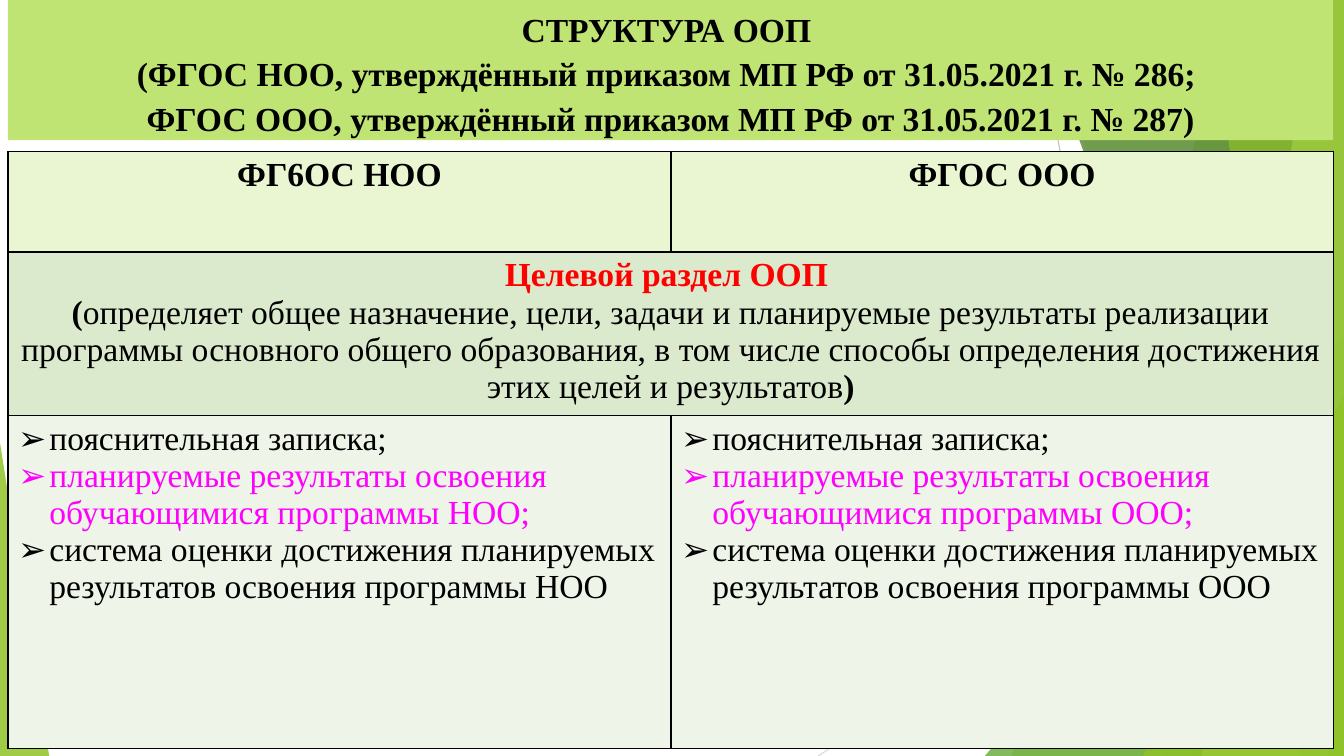
from dataclasses import dataclass

from lxml import etree
from pptx import Presentation
from pptx.dml.color import RGBColor
from pptx.enum.shapes import MSO_CONNECTOR, MSO_SHAPE
from pptx.enum.text import MSO_ANCHOR, PP_ALIGN
from pptx.oxml.ns import qn
from pptx.util import Cm, Pt

RECT, TRIANGLE = MSO_SHAPE.RECTANGLE, MSO_SHAPE.ISOSCELES_TRIANGLE
STRAIGHT = MSO_CONNECTOR.STRAIGHT
TOP, LEFT, CENTER = MSO_ANCHOR.TOP, PP_ALIGN.LEFT, PP_ALIGN.CENTER


@dataclass(frozen=True)
class Theme:
    font: str = "Times New Roman"
    size: float = 24
    black: str = "000000"
    red: str = "FF0000"
    magenta: str = "FF00FF"
    lime: str = "C0E474"
    green: str = "90C226"
    leaf: str = "54A021"
    forest: str = "3F7819"
    head_fill: str = "EAF6D1"
    section_fill: str = "DBE9CD"
    body_fill: str = "EEF4E8"


T = Theme()

# Content
TITLE = [
    "СТРУКТУРА ООП ",
    "(ФГОС НОО, утверждённый приказом МП РФ от 31.05.2021 г. № 286; ",
    "ФГОС ООО, утверждённый приказом МП РФ от 31.05.2021 г. № 287)",
]
HEADS = ["ФГ6ОС НОО", "ФГОС ООО"]
LEVELS = ["НОО", "ООО"]
# Paragraphs of runs: (text, colour, bold)
SECTION = [
    [("Целевой раздел ООП ", T.red, True)],
    [("(", T.black, True),
     ("определяет общее назначение, цели, задачи и планируемые результаты "
      "реализации программы основного общего образования, в том числе способы "
      "определения достижения этих целей и результатов", T.black, False),
     (")", T.black, True)],
]
ITEMS = [
    ("пояснительная записка;", T.black),
    ("планируемые результаты освоения обучающимися программы {};", T.magenta),
    ("система оценки достижения планируемых результатов освоения программы {}",
     T.black),
]

# Geometry in centimetres
WIDTH, HEIGHT = 33.87, 19.05
TITLE_BOX = (0.2, 0, 33.4, 3.53)
TABLE_LEFT, TABLE_TOP = 0.2, 3.81
COLS, ROWS = [16.71, 16.69], [2.54, 4.11, 8.41]
INDENT = 0.79

THIN_LINES = [
    ((26.04, 0), (29.41, HEIGHT), "BFBFBF"),
    ((WIDTH, 10.24), (20.62, HEIGHT), "D9D9D9"),
]
# Panels reach the right edge: (top x, bottom x), colour, opacity %
# Triangles: (left, top, width, apex), colour, opacity %; all stand on the bottom
DECOR = [
    ((31.19, 25.5), T.green, 30),
    ((26.67, 30.05), T.green, 20),
    ((24.82, 8.46, 9.05, 1), T.leaf, 72),
    ((25.93, 32.79), T.forest, 70),
    ((33.1, 30.28), T.lime, 70),
    ((30.38, 33.48), T.green, 65),
    ((28.8, 9.98, 5.07, 1), T.green, 80),
    ((0, 11.15, 1.24, 0), T.green, 85),
]


def paint(sp, color, opacity=100):
    sp.shadow.inherit = False
    sp.line.fill.background()
    sp.fill.solid()
    sp.fill.fore_color.rgb = RGBColor.from_string(color)
    if opacity < 100:
        clr = sp._element.spPr.find(qn("a:solidFill"))[0]
        etree.SubElement(clr, qn("a:alpha"), val=str(opacity * 1000))


def add_run(p, text, color, bold):
    r = p.add_run()
    r.text = text
    r.font.name, r.font.size, r.font.bold = T.font, Pt(T.size), bold
    r.font.color.rgb = RGBColor.from_string(color)


def add_bullet(p):
    pPr = p._p.get_or_add_pPr()
    pPr.set("marL", str(Cm(INDENT)))
    pPr.set("indent", str(-Cm(INDENT)))
    etree.SubElement(pPr, qn("a:buFont"), typeface="Wingdings")
    etree.SubElement(pPr, qn("a:buChar"), char="➢")
    pPr.find(qn("a:buFont")).set("typeface", "Arial")


def add_borders(cell):
    tcPr = cell._tc.get_or_add_tcPr()
    for i, side in enumerate(("lnL", "lnR", "lnT", "lnB")):
        ln = etree.Element(qn("a:" + side), w=str(Pt(1)))
        fill = etree.SubElement(ln, qn("a:solidFill"))
        etree.SubElement(fill, qn("a:srgbClr"), val=T.black)
        tcPr.insert(i, ln)


def fill_cell(cell, paragraphs, color, align=CENTER, bullets=False):
    cell.fill.solid()
    cell.fill.fore_color.rgb = RGBColor.from_string(color)
    tf = cell.text_frame
    for i, runs in enumerate(paragraphs):
        p = tf.add_paragraph() if i else tf.paragraphs[0]
        p.alignment = align
        if bullets:
            add_bullet(p)
        for run in runs:
            add_run(p, *run)


def add_decor(shapes):
    for start, end, color in THIN_LINES:
        line = shapes.add_connector(STRAIGHT, *map(Cm, start + end))
        line.line.color.rgb = RGBColor.from_string(color)
        line.line.width = Pt(0.75)
        etree.SubElement(line._element.spPr, qn("a:effectLst"))
    for outline, color, opacity in DECOR:
        if len(outline) == 2:
            top_x, bottom_x = map(Cm, outline)
            right, bottom = Cm(WIDTH), Cm(HEIGHT)
            builder = shapes.build_freeform(top_x, 0)
            builder.add_line_segments(
                [(right, 0), (right, bottom), (bottom_x, bottom)])
            sp = builder.convert_to_shape()
        else:
            left, top, width, apex = outline
            sp = shapes.add_shape(TRIANGLE, Cm(left), Cm(top), Cm(width),
                                  Cm(HEIGHT - top))
            sp.adjustments[0] = apex
        paint(sp, color, opacity)


def add_title(shapes):
    sp = shapes.add_shape(RECT, *map(Cm, TITLE_BOX))
    paint(sp, T.lime)
    tf = sp.text_frame
    tf.word_wrap, tf.vertical_anchor = True, TOP
    p = tf.paragraphs[0]
    p.alignment, p.line_spacing = CENTER, 1.1
    for i, text in enumerate(TITLE):
        if i:
            p.add_line_break()
        add_run(p, text, T.black, True)


def add_structure_table(shapes):
    table = shapes.add_table(len(ROWS), len(COLS), Cm(TABLE_LEFT), Cm(TABLE_TOP),
                             Cm(sum(COLS)), Cm(sum(ROWS))).table
    table.first_row = table.horz_banding = False
    for col, width in zip(table.columns, COLS):
        col.width = Cm(width)
    for row, height in zip(table.rows, ROWS):
        row.height = Cm(height)
    table.cell(1, 0).merge(table.cell(1, 1))
    fill_cell(table.cell(1, 0), SECTION, T.section_fill)
    for c, (head, level) in enumerate(zip(HEADS, LEVELS)):
        fill_cell(table.cell(0, c), [[(head, T.black, True)]], T.head_fill)
        items = [[(text.format(level), color, False)] for text, color in ITEMS]
        fill_cell(table.cell(2, c), items, T.body_fill, LEFT, bullets=True)
    for cell in table.iter_cells():
        add_borders(cell)


def main():
    prs = Presentation()
    prs.slide_width, prs.slide_height = Cm(WIDTH), Cm(HEIGHT)
    s = prs.slides.add_slide(prs.slide_layouts[6])
    add_decor(s.shapes)
    add_title(s.shapes)
    add_structure_table(s.shapes)
    prs.save("out.pptx")


if __name__ == "__main__":
    main()
